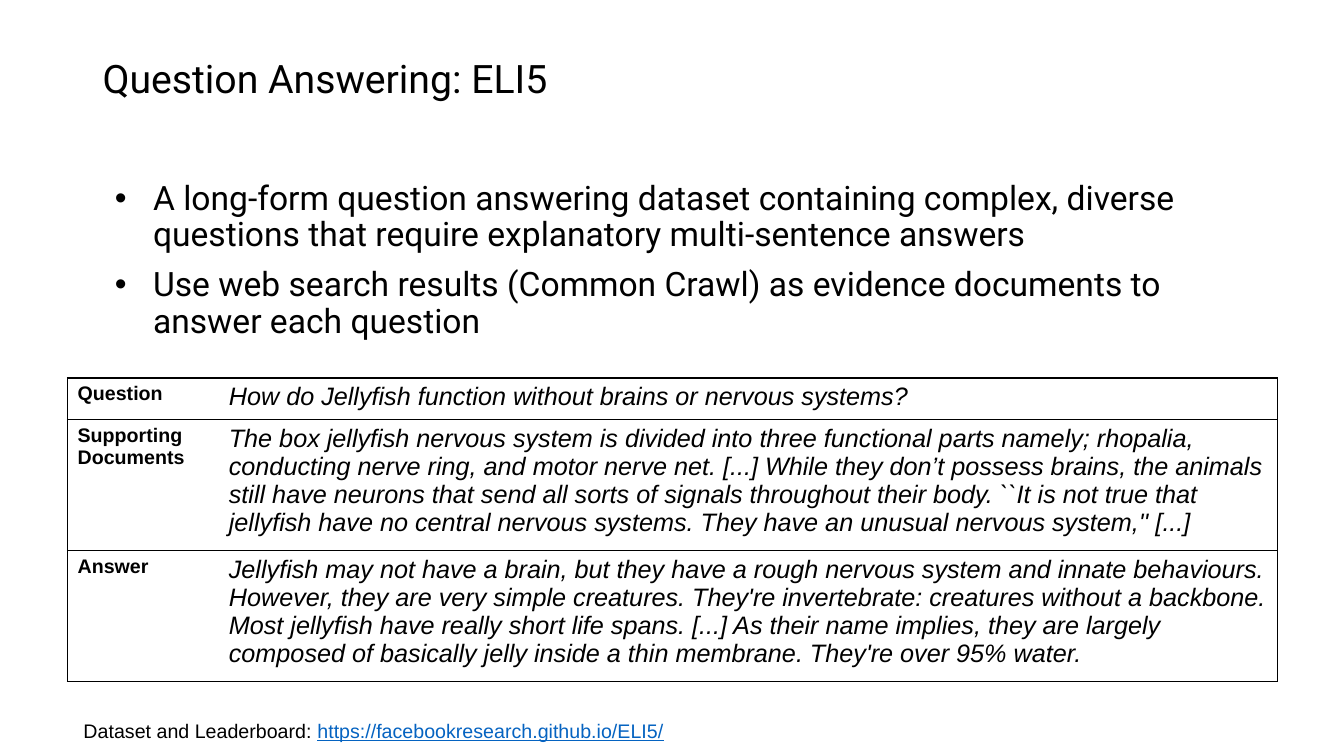
"""Build the slide on the ELI5 question answering dataset."""
import pptx
import pptx.dml.color
import pptx.enum.text
import pptx.oxml
import pptx.oxml.ns
import pptx.util
from pptx.util import Inches

BLACK = "000000"
TITLE = "Question Answering: ELI5"
BULLETS = [
    "A long-form question answering dataset containing complex, diverse questions "
    "that require explanatory multi-sentence answers",
    "Use web search results (Common Crawl) as evidence documents to answer each question",
]
EXAMPLE = [
    ("Question", "How do Jellyfish function without brains or nervous systems?", 0.41),
    ("Supporting Documents",
     "The box jellyfish nervous system is divided into three functional parts namely; "
     "rhopalia, conducting nerve ring, and motor nerve net. [...] While they don’t possess "
     "brains, the animals still have neurons that send all sorts of signals throughout "
     "their body. ``It is not true that jellyfish have no central nervous systems. "
     "They have an unusual nervous system,'' [...]", 1.3),
    ("Answer",
     "Jellyfish may not have a brain, but they have a rough nervous system and innate "
     "behaviours. However, they are very simple creatures. They're invertebrate: creatures "
     "without a backbone. Most jellyfish have really short life spans. [...] As their name "
     "implies, they are largely composed of basically jelly inside a thin membrane. "
     "They're over 95% water.", 1.3),
]
COLUMN_WIDTHS = (1.5, 10.5)
COLUMN_STYLES = ({"size": 14, "bold": True}, {"size": 18, "italic": True})
COLUMN_EDGES = ("LTB", "RTB")
SOURCE_LABEL = "Dataset and Leaderboard: "
SOURCE_ADDRESS = "https://facebookresearch.github.io/ELI5/"


def color(hex_text):
    return pptx.dml.color.RGBColor.from_string(hex_text)


def add_span(para, text, size, face="Arial", tone=BLACK, bold=False, italic=False, underline=False):
    span = para.add_run()
    span.text = text
    font = span.font
    font.name, font.size = face, pptx.util.Pt(size)
    font.bold, font.italic, font.underline = bold, italic, underline
    font.color.rgb = color(tone)


def add_box(page, left, top, width, height):
    frame = page.shapes.add_textbox(*map(Inches, (left, top, width, height))).text_frame
    frame.word_wrap = True
    return frame


def add_bullet(para):
    properties = para._p.get_or_add_pPr()
    properties.set("marL", str(Inches(0.5)))
    properties.set("indent", str(Inches(-0.38)))
    namespace = pptx.oxml.ns.nsdecls("a")
    for xml in (f'<a:buClr {namespace}><a:srgbClr val="{BLACK}"/></a:buClr>',
                f'<a:buFont {namespace} typeface="Arial"/>',
                f'<a:buChar {namespace} char="•"/>'):
        properties.append(pptx.oxml.parse_xml(xml))


def set_borders(cell, edges):
    properties = cell._tc.get_or_add_tcPr()
    for position, edge in enumerate("LRTB"):
        shown = edge in edges
        paint = f'<a:solidFill><a:srgbClr val="{BLACK}"/></a:solidFill>' if shown else "<a:noFill/>"
        width = pptx.util.Pt(1 if shown else 0)
        properties.insert(position, pptx.oxml.parse_xml(
            f'<a:ln{edge} {pptx.oxml.ns.nsdecls("a")} w="{width}">{paint}</a:ln{edge}>'))


def add_example(page):
    heights = [height for _, _, height in EXAMPLE]
    table = page.shapes.add_table(
        len(EXAMPLE), 2, Inches(0.67), Inches(3.75),
        Inches(sum(COLUMN_WIDTHS)), Inches(sum(heights))).table
    table.first_row = table.horz_banding = False
    for column, width in zip(table.columns, COLUMN_WIDTHS):
        column.width = Inches(width)
    for row, (label, passage, height) in zip(table.rows, EXAMPLE):
        row.height = Inches(height)
        for cell, text, style, edges in zip(row.cells, (label, passage), COLUMN_STYLES, COLUMN_EDGES):
            cell.fill.background()
            set_borders(cell, edges)
            add_span(cell.text_frame.paragraphs[0], text, **style)


def main():
    deck = pptx.Presentation()
    deck.slide_width, deck.slide_height = Inches(13.33), Inches(7.5)
    page = deck.slides.add_slide(deck.slide_layouts[6])

    title = add_box(page, 0.92, 0.4, 11.5, 0.81)
    title.vertical_anchor = pptx.enum.text.MSO_ANCHOR.MIDDLE
    title.paragraphs[0].line_spacing = 0.9
    add_span(title.paragraphs[0], TITLE, 28, "Roboto")

    body = add_box(page, 0.92, 1.75, 11.5, 4.76)
    for index, text in enumerate(BULLETS):
        para = body.add_paragraph() if index else body.paragraphs[0]
        add_bullet(para)
        para.line_spacing = 0.9
        if index:
            para.space_before = pptx.util.Pt(10)
        add_span(para, text, 24, "Roboto")

    source = add_box(page, 0.73, 7.08, 11.87, 0.4).paragraphs[0]
    add_span(source, SOURCE_LABEL, 14)
    add_span(source, SOURCE_ADDRESS, 14, tone="0563C1", underline=True)

    add_example(page)
    deck.save("out.pptx")


if __name__ == "__main__":
    main()
